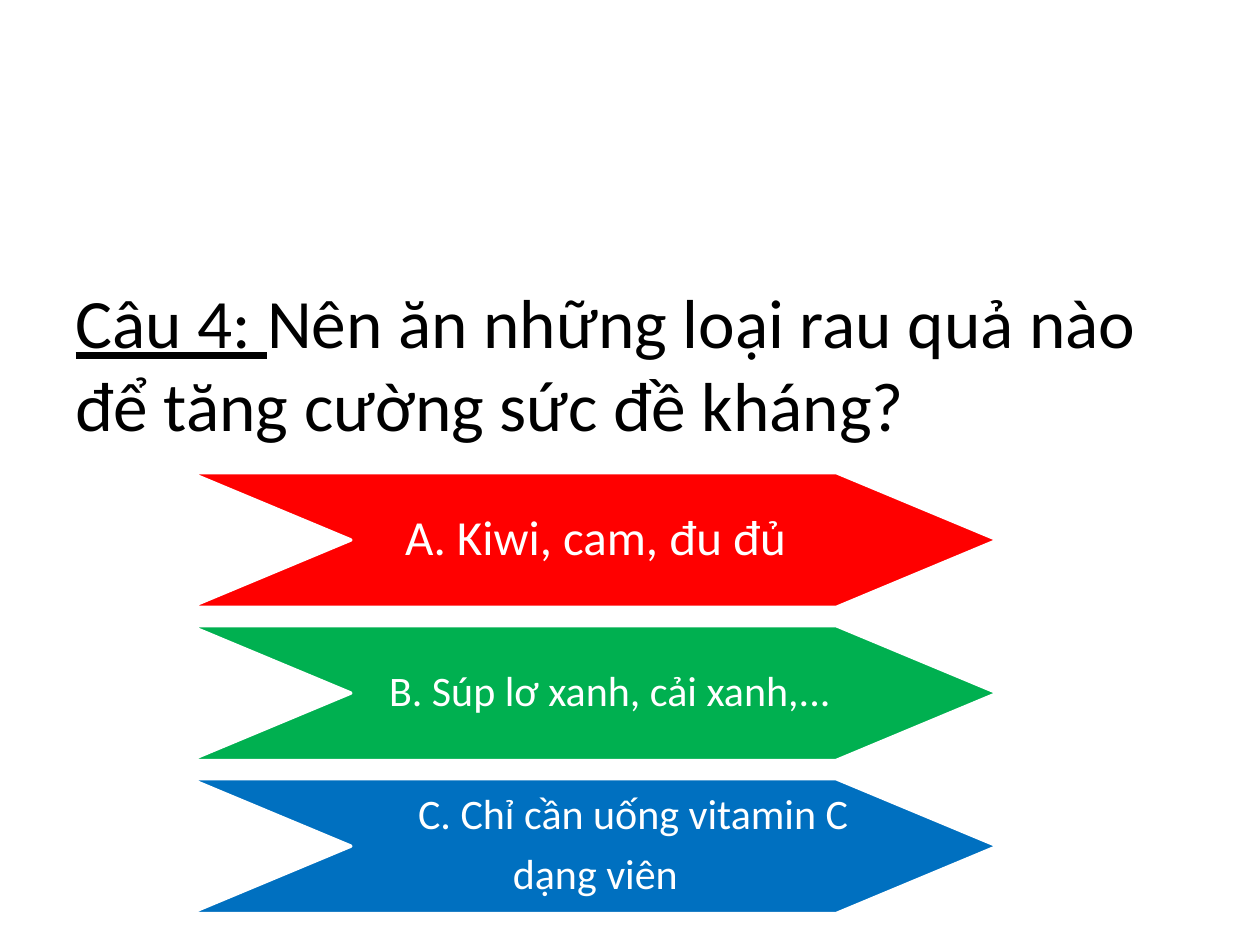
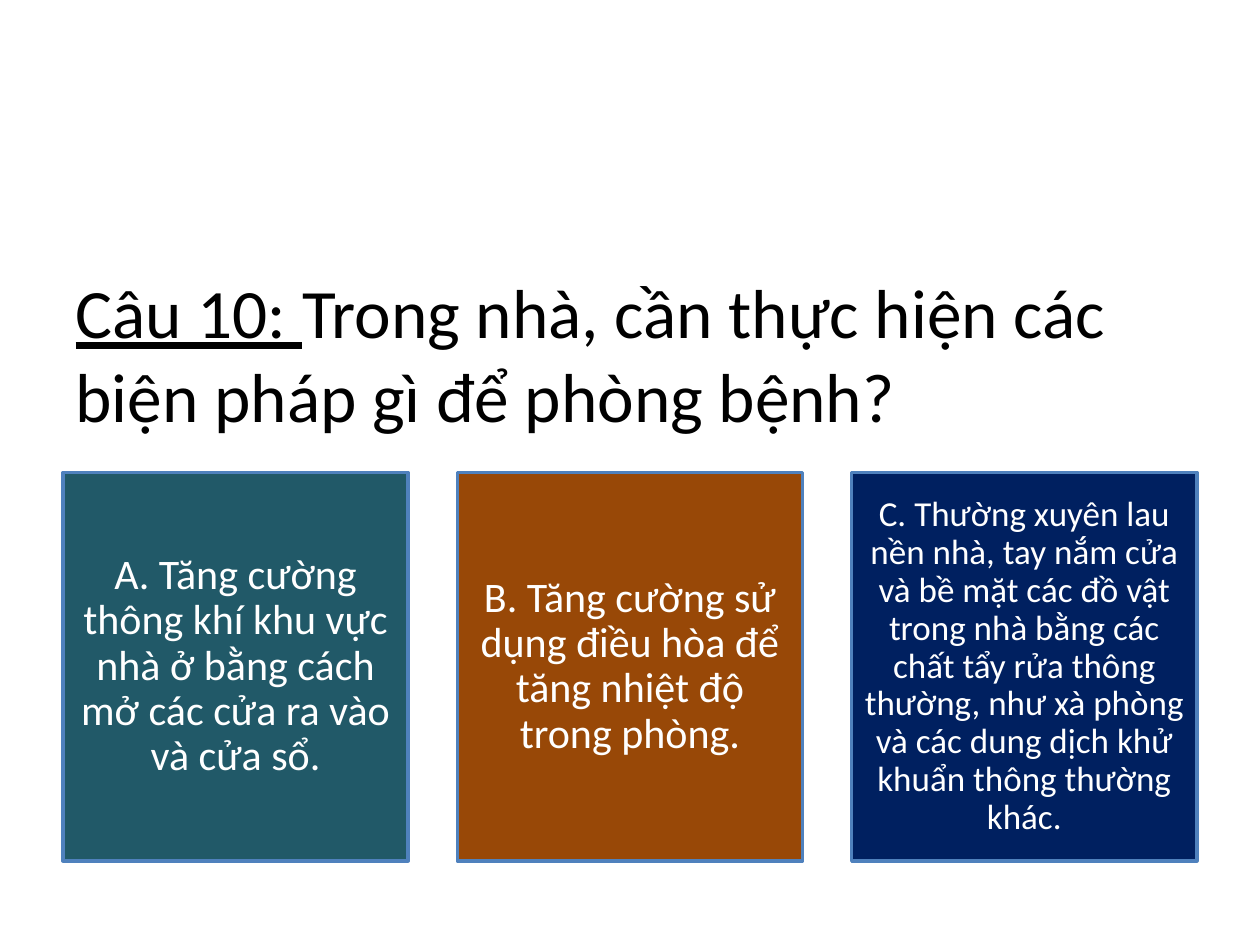
from dataclasses import dataclass

import pptx
import pptx.util
import pptx.dml.color
import pptx.enum.shapes
import pptx.enum.text


@dataclass(frozen=True)
class Theme:
    font: str = "Calibri"
    title_size: float = 39.6
    large: int = 28
    medium: int = 24
    small: int = 20
    black: str = "000000"
    white: str = "FFFFFF"
    outline: str = "4F81BD"
    red: str = "FF0000"
    green: str = "00B050"
    blue: str = "0070C0"
    teal: str = "215968"
    brown: str = "984807"
    navy: str = "002060"


theme = Theme()
rgb = pptx.dml.color.RGBColor.from_string
align = pptx.enum.text.PP_ALIGN
middle = pptx.enum.text.MSO_ANCHOR.MIDDLE

deck = pptx.Presentation()
deck.slide_width = pptx.util.Inches(10)
deck.slide_height = pptx.util.Inches(7.5)
across = deck.slide_width
down = deck.slide_height
margin = 0.05 * across
answers_top = 0.5 * down


def add_question(number, question, top):
    """Add a slide whose title is a numbered question, top being a share of the height."""
    page = deck.slides.add_slide(deck.slide_layouts.get_by_name("Title Only"))
    title = page.shapes.title
    title.left, title.top = int(margin), int(top * down)
    title.width, title.height = int(across - 2 * margin), int(down / 6)
    title.text_frame.auto_size = pptx.enum.text.MSO_AUTO_SIZE.NONE
    title.text_frame.vertical_anchor = middle
    para = title.text_frame.paragraphs[0]
    para.alignment = align.LEFT
    para.font.name = theme.font
    para.font.size = pptx.util.Pt(theme.title_size)
    para.font.color.rgb = rgb(theme.black)
    label = para.add_run()
    label.text = f"Câu {number}: "
    label.font.underline = True
    para.add_run().text = question
    return page


def style_answer(shape, lines, size, fill, outline, insets):
    """Format an answer; each line is a text and its left indent in inches."""
    shape.shadow.inherit = False
    shape.fill.solid()
    shape.fill.fore_color.rgb = rgb(fill)
    shape.line.color.rgb = rgb(outline)
    shape.line.width = pptx.util.Pt(2)
    frame = shape.text_frame
    frame.word_wrap = True
    frame.vertical_anchor = middle
    frame.margin_left, frame.margin_top, frame.margin_right, frame.margin_bottom = map(
        pptx.util.Inches, insets)
    for index, (text, indent) in enumerate(lines):
        para = frame.paragraphs[0] if index == 0 else frame.add_paragraph()
        para.text = text
        para.alignment = align.CENTER
        para.line_spacing = 0.9
        para.space_after = pptx.util.Pt(0.35 * size)
        para.font.name = theme.font
        para.font.size = pptx.util.Pt(size)
        para.font.color.rgb = rgb(theme.white)
        if indent:
            para._p.get_or_add_pPr().set("marL", str(pptx.util.Inches(indent)))


# Question 4: three arrows stacked in rows
page = add_question(4, "Nên ăn những loại rau quả nào để tăng cường sức đề kháng?", 0.3)
arrow_left = 0.15 * across
arrow_width = 0.642 * across
arrow_height = down / 7
arrow_pitch = 0.162 * down
point = 0.2 * arrow_width
arrows = [
    ([("A. Kiwi, cam, đu đủ", 0)], theme.large, theme.red),
    ([("B. Súp lơ xanh, cải xanh,...", 0.23)], theme.medium, theme.green),
    ([("C. Chỉ cần uống vitamin C", 0.6), ("dạng viên", 0)], theme.medium, theme.blue),
]
for row, (lines, size, fill) in enumerate(arrows):
    top = answers_top + row * arrow_pitch
    centre, bottom = top + arrow_height / 2, top + arrow_height
    right = arrow_left + arrow_width
    outline = page.shapes.build_freeform(arrow_left, top)
    outline.add_line_segments([
        (right - point, top), (right, centre), (right - point, bottom),
        (arrow_left, bottom), (arrow_left + point, centre),
    ])
    style_answer(outline.convert_to_shape(), lines, size, fill, theme.white,
                 (0.53, 0.01, 0.5, 0.01))

# Question 10: three cards side by side
page = add_question(10, "Trong nhà, cần thực hiện các biện pháp gì để phòng bệnh?", 0.29)
card_width = 0.274 * across
card_height = 0.411 * down
card_pitch = (across - 2 * margin - card_width) / 2
cards = [
    ("A. Tăng cường thông khí khu vực nhà ở bằng cách mở các cửa ra vào và cửa sổ.",
     theme.medium, theme.teal),
    ("B. Tăng cường sử dụng điều hòa để tăng nhiệt độ trong phòng.",
     theme.medium, theme.brown),
    ("C. Thường xuyên lau nền nhà, tay nắm cửa và bề mặt các đồ vật trong nhà bằng các "
     "chất tẩy rửa thông thường, như xà phòng và các dung dịch khử khuẩn thông thường khác.",
     theme.small, theme.navy),
]
for column, (text, size, fill) in enumerate(cards):
    card = page.shapes.add_shape(
        pptx.enum.shapes.MSO_SHAPE.RECTANGLE, int(margin + column * card_pitch),
        int(answers_top), int(card_width), int(card_height))
    style_answer(card, [(text, 0)], size, fill, theme.outline, (0.09, 0.05, 0.09, 0.05))

deck.save("out.pptx")
